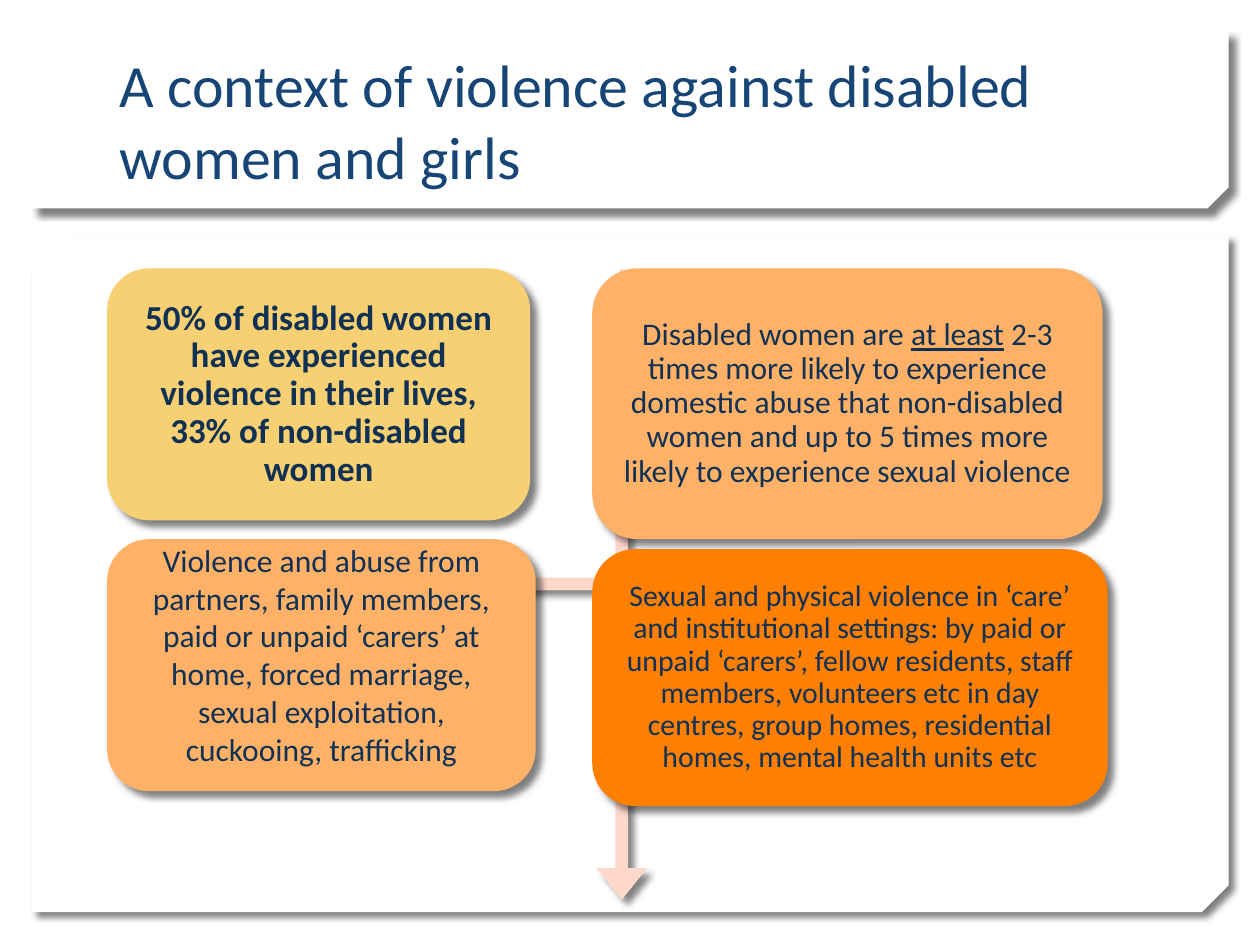
from lxml import etree
from pptx import Presentation
from pptx import util as u
from pptx.dml.color import RGBColor
from pptx.enum import shapes, text
from pptx.oxml.ns import qn

Cm = u.Cm
NAVY, TITLE_BLUE = "103154", "174576"
YELLOW, PEACH, ORANGE, PINK, WHITE = "F7D073", "FFB267", "FF7F01", "FFD8CC", "FFFFFF"
CARD_MARGIN = 0.25
CARDS = [
    dict(box=(2.16, 5.41, 8.53, 5.08), fill=YELLOW,
         runs=["50% of disabled women have experienced violence in their lives, "
               "33% of non-disabled women"],
         style=dict(size=20, bold=True, inset=0.2)),
    dict(box=(11.94, 5.41, 10.29, 5.46), fill=PEACH,
         runs=["Disabled women are ", ("at least",),
               " 2-3 times more likely to experience domestic abuse that non-disabled "
               "women and up to 5 times more likely to experience sexual violence"],
         style=dict(size=18)),
    dict(box=(2.16, 10.87, 8.64, 5.08), fill=PEACH,
         runs=["Violence and abuse from partners, family members, paid or unpaid "
               "‘carers’ at home, forced marriage, sexual exploitation, cuckooing, "
               "trafficking"],
         style=dict(size=18, spacing=1.0, bottom=0.62)),
    dict(box=(11.94, 11.07, 10.39, 5.18), fill=ORANGE,
         runs=["Sexual and physical violence in ‘care’ and institutional settings: by "
               "paid or unpaid ‘carers’, fellow residents, staff members, volunteers "
               "etc in day centres, group homes, residential homes, mental health "
               "units etc"],
         style=dict(size=17)),
]


def rgb(value):
    """Turn a hex string into a colour."""
    return RGBColor.from_string(value)


def add_shadow(shape):
    """Give a shape a soft half-transparent shadow to the lower right."""
    shape.shadow.inherit = False
    effects = shape._element.spPr.find(qn("a:effectLst"))
    shadow = etree.SubElement(effects, qn("a:outerShdw"), blurRad=str(u.Pt(4)),
                              dist=str(u.Pt(5)), dir="2700000", algn="tl",
                              rotWithShape="0")
    black = etree.SubElement(shadow, qn("a:srgbClr"), val="000000")
    etree.SubElement(black, qn("a:alpha"), val="50000")


def add_panel(slide, kind, box, fill, adjustments=()):
    """Add a filled preset shape with a shadow; box is in centimetres."""
    panel = slide.shapes.add_shape(kind, *map(Cm, box))
    panel.fill.solid()
    panel.fill.fore_color.rgb = rgb(fill)
    panel.line.fill.background()
    for index, value in enumerate(adjustments):
        panel.adjustments[index] = value
    add_shadow(panel)


def add_text(slide, box, runs, size=18, colour=NAVY, bold=False, spacing=0.9,
             align=text.PP_ALIGN.CENTER, anchor=text.MSO_ANCHOR.MIDDLE,
             inset=0.18, bottom=None):
    """Add a wrapped text box; runs given as tuples are underlined."""
    frame = slide.shapes.add_textbox(*map(Cm, box)).text_frame
    frame.word_wrap = True
    frame.vertical_anchor = anchor
    frame.margin_left = frame.margin_right = frame.margin_top = Cm(inset)
    frame.margin_bottom = Cm(inset if bottom is None else bottom)
    paragraph = frame.paragraphs[0]
    paragraph.alignment = align
    paragraph.line_spacing = spacing
    for piece in runs:
        underlined = isinstance(piece, tuple)
        run = paragraph.add_run()
        run.text = piece[0] if underlined else piece
        run.font.name = "Calibri"
        run.font.size = u.Pt(size)
        run.font.bold = bold
        run.font.underline = underlined
        run.font.color.rgb = rgb(colour)


def add_card(slide, box, fill, runs, style):
    """Add a rounded card with its statement inside."""
    add_panel(slide, shapes.MSO_SHAPE.ROUNDED_RECTANGLE, box, fill)
    left, top, width, height = box
    inner = (left + CARD_MARGIN, top + CARD_MARGIN,
             width - 2 * CARD_MARGIN, height - 2 * CARD_MARGIN)
    add_text(slide, inner, runs, **style)


def main():
    """Build the slide and save it."""
    deck = Presentation()
    deck.slide_width, deck.slide_height = Cm(25.4), Cm(19.05)
    slide = deck.slides.add_slide(deck.slide_layouts[6])
    snipped = shapes.MSO_SHAPE.SNIP_2_DIAG_RECTANGLE
    add_panel(slide, snipped, (0.64, 4.75, 24.13, 13.64), WHITE, (0.04, 0))
    add_panel(slide, snipped, (0.64, 0.64, 24.13, 3.56), WHITE, (0.12, 0))
    add_text(slide, (2.16, 0.81, 21.06, 3.18),
             ["A context of violence against disabled women and girls"],
             size=34.2, colour=TITLE_BLUE, spacing=1.0, align=text.PP_ALIGN.LEFT,
             anchor=text.MSO_ANCHOR.BOTTOM, inset=0.25, bottom=0.13)
    add_panel(slide, shapes.MSO_SHAPE.QUAD_ARROW, (6.17, 5.41, 12.73, 12.73), PINK,
              (0.02, 0.04, 0.05))
    for card in CARDS:
        add_card(slide, **card)
    deck.save("out.pptx")


if __name__ == "__main__":
    main()
